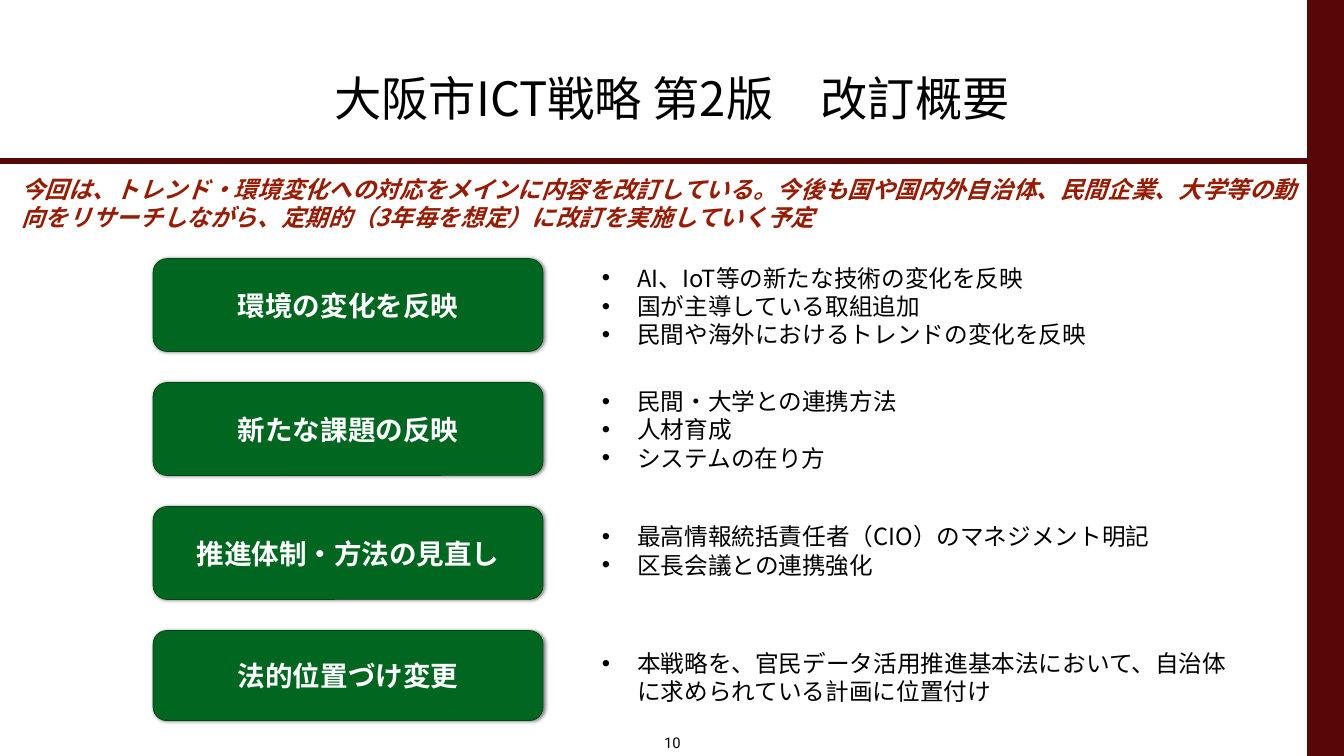
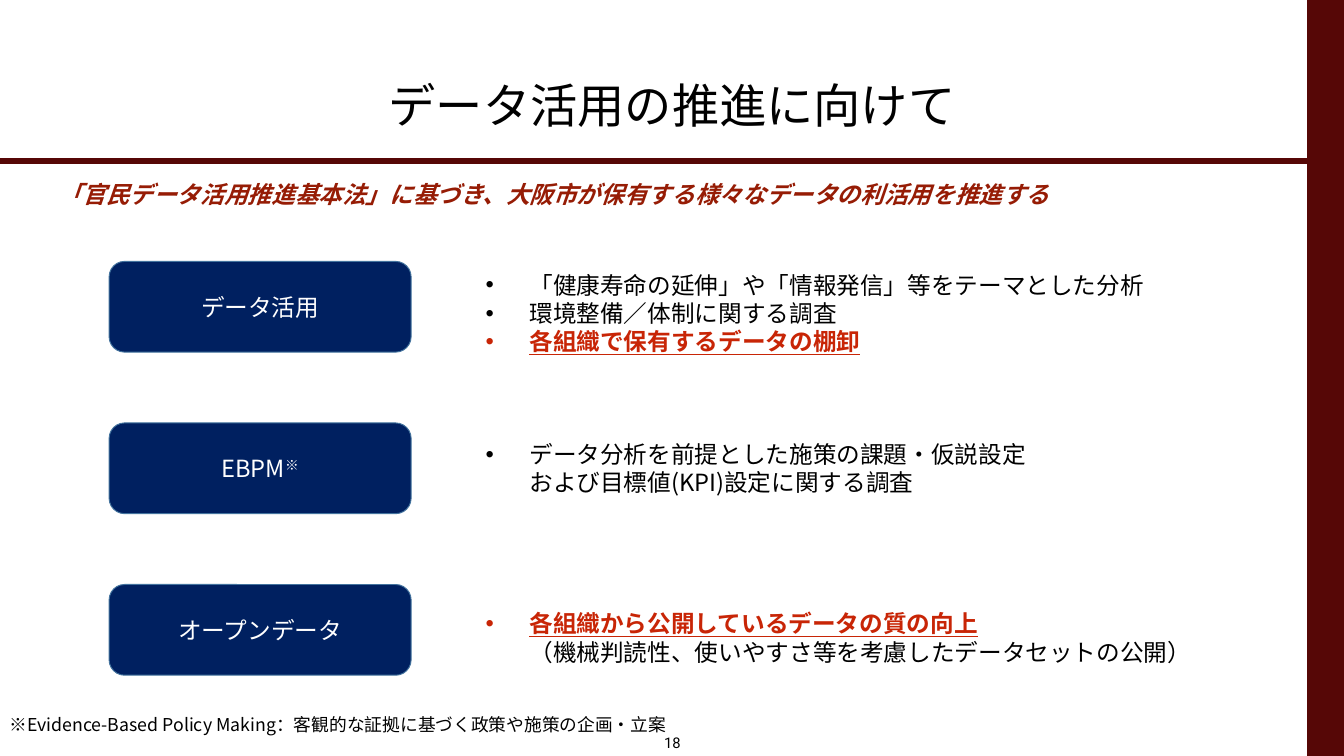
from lxml import etree
from pptx import Presentation
from pptx.dml.color import RGBColor
from pptx.enum.shapes import MSO_CONNECTOR, MSO_SHAPE
from pptx.enum.text import MSO_ANCHOR, PP_ALIGN
from pptx.oxml.ns import qn
from pptx.util import Inches, Pt

RECT, ROUNDED = MSO_SHAPE.RECTANGLE, MSO_SHAPE.ROUNDED_RECTANGLE
STRAIGHT = MSO_CONNECTOR.STRAIGHT
LEFT, CENTER = PP_ALIGN.LEFT, PP_ALIGN.CENTER
MIDDLE, TOP = MSO_ANCHOR.MIDDLE, MSO_ANCHOR.TOP

rgb = RGBColor.from_string
MAROON, LEAD_RED, STRESS_RED = "560706", "961C05", "C82506"
BLACK, WHITE = "000000", "FFFFFF"
JAPANESE, LATIN = "Noto Sans CJK JP", "Roboto"

deck = Presentation()
deck.slide_width, deck.slide_height = Inches(18.96), Inches(10.67)
blank = deck.slide_layouts[6]


def place(left, top, width, height):
    """Turn percentages of the slide's width and height into lengths."""
    across, down = deck.slide_width / 100, deck.slide_height / 100
    return int(left * across), int(top * down), int(width * across), int(height * down)


def write(shape, paragraphs, size=24, color=BLACK, font=JAPANESE, bold=False,
          italic=False, align=LEFT, anchor=MIDDLE, indent=0):
    """Fill a shape with paragraphs, each a text or a list of (text, changes) runs.

    An indent is in inches and brings a bullet; a newline text is a line break.
    """
    frame = shape.text_frame
    frame.word_wrap, frame.vertical_anchor = True, anchor
    frame.margin_left = frame.margin_right = Inches(0.06)
    frame.margin_top = frame.margin_bottom = Inches(0.06)
    for number, content in enumerate(paragraphs):
        paragraph = frame.add_paragraph() if number else frame.paragraphs[0]
        paragraph.alignment = align
        if indent:
            props = paragraph._p.get_or_add_pPr()
            props.set("marL", str(Inches(indent)))
            props.set("indent", str(-Inches(indent)))
            etree.SubElement(props, qn("a:buFont"), typeface="Arial")
            etree.SubElement(props, qn("a:buChar"), char="•")
        for text, changes in [(content, {})] if isinstance(content, str) else content:
            if text == "\n":
                paragraph.add_line_break()
                continue
            run = paragraph.add_run()
            run.text = text
            run.font.size, run.font.name = Pt(size), font
            run.font.bold, run.font.italic = changes.get("bold", bold), italic
            run.font.underline = changes.get("underline", False)
            run.font.color.rgb = rgb(changes.get("color", color))
            props = run._r.get_or_add_rPr()
            etree.SubElement(props, qn("a:ea"), typeface=font)
            if "baseline" in changes:
                props.set("baseline", changes["baseline"])


STRESS = {"color": STRESS_RED, "bold": True, "underline": True}

# Each topic: label, height of its button, top and line count of its points, points.
pages = [
    {
        "number": "10",
        "title": "大阪市ICT戦略 第2版　改訂概要",
        "title_top": 3.28,
        "lead": "今回は、トレンド・環境変化への対応をメインに内容を改訂している。"
                "今後も国や国内外自治体、民間企業、大学等の動向をリサーチしながら、"
                "定期的（3年毎を想定）に改訂を実施していく予定",
        "lead_box": (1.27, 22.59, 96.31, 8.62),
        "button": {"left": 11.39, "top": 34.21, "width": 29.01, "pitch": 16.4,
                   "fill": "006620", "line": "004416", "line_width": 0.75,
                   "corner": 0.15, "shadow": True, "size": 28, "bold": True},
        "points": {"left": 44.46, "width": 47.73, "indent": 0.5},
        "topics": [
            ("環境の変化を反映", 12.28, 34.3, 3,
             ["AI、IoT等の新たな技術の変化を反映", "国が主導している取組追加",
              "民間や海外におけるトレンドの変化を反映"]),
            ("新たな課題の反映", 12.28, 50.61, 3,
             ["民間・大学との連携方法", "人材育成", "システムの在り方"]),
            ("推進体制・方法の見直し", 12.28, 68.51, 2,
             ["最高情報統括責任者（CIO）のマネジメント明記", "区長会議との連携強化"]),
            ("法的位置づけ変更", 11.9, 85.29, 2,
             ["本戦略を、官民データ活用推進基本法において、"
              "自治体に求められている計画に位置付け"]),
        ],
    },
    {
        "number": "18",
        "title": "データ活用の推進に向けて",
        "title_top": 4.22,
        "lead": "「官民データ活用推進基本法」に基づき、"
                "大阪市が保有する様々なデータの利活用を推進する",
        "lead_box": (4.06, 23.24, 86.02, 4.87),
        "button": {"left": 8.12, "top": 34.58, "width": 22.47, "pitch": 21.37,
                   "fill": "002060", "line": "43739E", "line_width": 1,
                   "corner": 0.17, "shadow": False, "size": 24, "bold": False},
        "points": {"left": 35.81, "width": 53.64, "indent": 0.62},
        "topics": [
            ("データ活用", 12, 35.24, 3,
             ["「健康寿命の延伸」や「情報発信」等をテーマとした分析",
              "環境整備／体制に関する調査",
              [("各組織で保有するデータの棚卸", STRESS)]]),
            ([("EBPM", {}), ("※", {"baseline": "30000"})], 12, 57.64, 2,
             [[("データ分析を前提とした施策の課題・仮説設定", {}), ("\n", {}),
               ("および目標値(KPI)設定に関する調査", {})]]),
            ("オープンデータ", 12, 80.04, 2,
             [[("各組織から公開しているデータの質の向上", STRESS), ("\n", {}),
               ("（機械判読性、使いやすさ等を考慮したデータセットの公開）", {})]]),
        ],
        "footnote": "※Evidence-Based Policy Making：客観的な証拠に基づく政策や施策の企画・立案",
    },
]

for page in pages:
    shapes = deck.slides.add_slide(blank).shapes

    side_band = shapes.add_shape(RECT, *place(97.26, 0, 2.74, 100))
    side_band.shadow.inherit = False
    side_band.fill.solid()
    side_band.fill.fore_color.rgb = rgb(MAROON)
    side_band.line.fill.background()

    rule_left, rule_top, rule_right, _ = place(0, 21.27, 97.26, 0)
    title_rule = shapes.add_connector(STRAIGHT, rule_left, rule_top, rule_right, rule_top)
    title_rule.line.color.rgb, title_rule.line.width = rgb(MAROON), Pt(6)
    etree.SubElement(title_rule._element.spPr, qn("a:effectLst"))

    write(shapes.add_textbox(*place(6.86, page["title_top"], 86.29, 19.31)),
          [page["title"]], size=48, align=CENTER)
    write(shapes.add_textbox(*place(*page["lead_box"])),
          [page["lead"]], color=LEAD_RED, bold=True, italic=True)

    look, column = page["button"], page["points"]
    for row, (label, height, points_top, lines, points) in enumerate(page["topics"]):
        top = look["top"] + row * look["pitch"]
        button = shapes.add_shape(ROUNDED, *place(look["left"], top, look["width"], height))
        button.adjustments[0] = look["corner"]
        button.fill.solid()
        button.fill.fore_color.rgb = rgb(look["fill"])
        button.line.color.rgb, button.line.width = rgb(look["line"]), Pt(look["line_width"])
        button.shadow.inherit = False
        if look["shadow"]:
            effects = button._element.spPr.find(qn("a:effectLst"))
            shadow = etree.SubElement(effects, qn("a:outerShdw"), blurRad=str(Pt(4)),
                                      dist=str(Pt(1)), dir="0", rotWithShape="0")
            shade = etree.SubElement(shadow, qn("a:srgbClr"), val=BLACK)
            etree.SubElement(shade, qn("a:alpha"), val="50000")
        write(button, [label], size=look["size"], color=WHITE, bold=look["bold"], align=CENTER)

        points_height = 1.12 + 3.75 * lines
        write(shapes.add_textbox(*place(column["left"], points_top, column["width"], points_height)),
              points, indent=column["indent"])

    if "footnote" in page:
        write(shapes.add_textbox(*place(0, 93.91, 50.27, 3.94)),
              [page["footnote"]], size=18, align=CENTER)
    write(shapes.add_textbox(*place(48.89, 96.53, 2.27, 3.37)),
          [page["number"]], size=15, font=LATIN, align=CENTER, anchor=TOP)

deck.save("out.pptx")
